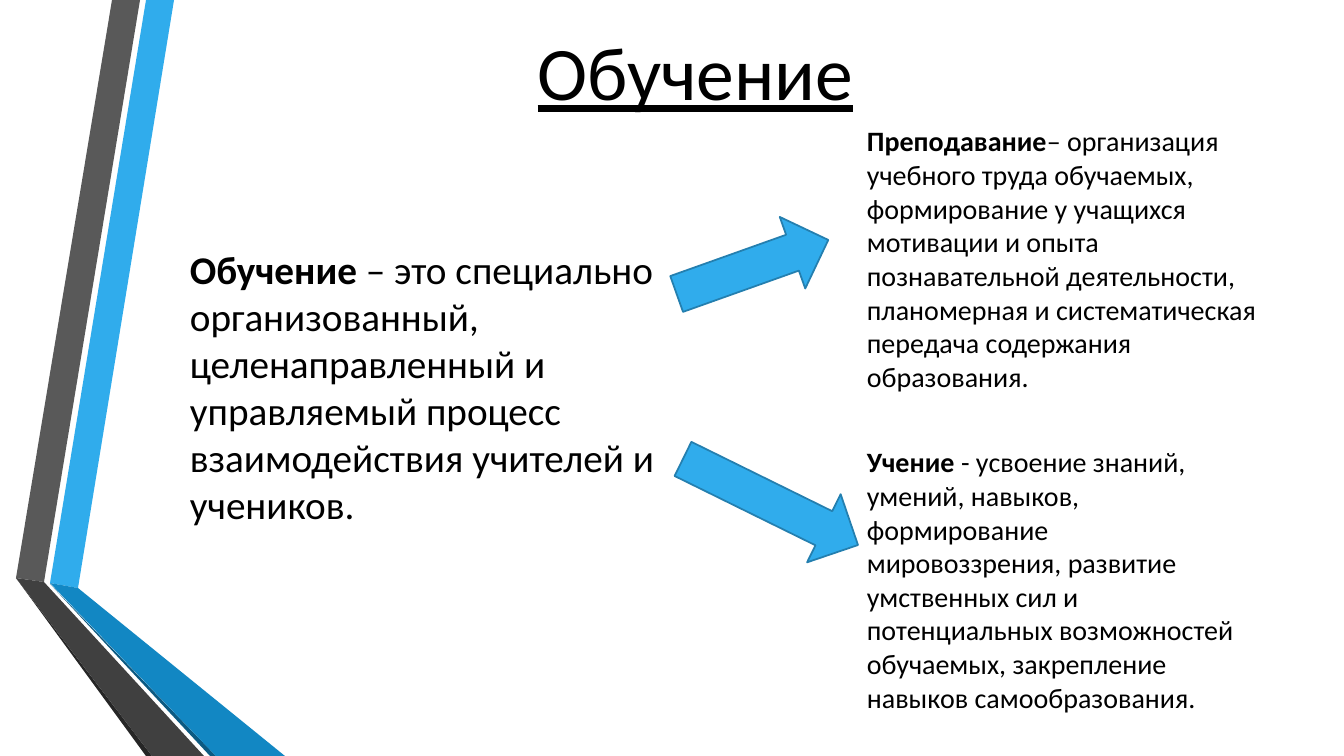
from pptx import Presentation
from pptx import util as u
from pptx.dml.color import RGBColor
from pptx.enum import shapes, text

PX = 914400 / 100.8
FONT = "Calibri"
BLACK = RGBColor(0x00, 0x00, 0x00)
BLUE = RGBColor(0x30, 0xAC, 0xEC)
BLUE_OUTLINE = RGBColor(0x24, 0x7F, 0xAF)
BLUE_FOLD = RGBColor(0x12, 0x87, 0xC3)
BLUE_EDGE = RGBColor(0x0C, 0x5A, 0x82)
GREY = RGBColor(0x59, 0x59, 0x59)
GREY_FOLD = RGBColor(0x40, 0x40, 0x40)
GREY_EDGE = RGBColor(0x26, 0x26, 0x26)

SLIDE_SIZE = (1344, 756)
TITLE = "Обучение"
TITLE_BOX = (139, -4, 1113, 149)

# Ribbon pieces from back to front: colour, corner points
RIBBONS = [
    (BLUE, [(50, 583), (78, 588), (174, 0), (146, 0)]),
    (GREY, [(140, 0), (112, 0), (16, 578), (44, 582)]),
    (GREY_EDGE, [(16, 578), (146, 756), (152, 756)]),
    (BLUE_EDGE, [(50, 584), (210, 756), (216, 756)]),
    (BLUE_FOLD, [(50, 583), (216, 756), (285, 756), (78, 588)]),
    (GREY_FOLD, [(16, 578), (152, 756), (204, 756), (44, 582)]),
]

# Box, size in points, term, explanation
DEFINITIONS = [
    ((180, 240, 560, 295), 28, "Обучение ",
     "– это специально организованный, целенаправленный и управляемый "
     "процесс взаимодействия учителей и учеников."),
    ((857, 119, 426, 315), 20, "Преподавание",
     "– организация учебного труда обучаемых, формирование у учащихся "
     "мотивации и опыта познавательной деятельности, планомерная и "
     "систематическая передача содержания образования."),
    ((857, 440, 398, 315), 20, "Учение ",
     "- усвоение знаний, умений, навыков, формирование мировоззрения, "
     "развитие умственных сил и потенциальных возможностей обучаемых, "
     "закрепление навыков самообразования."),
]

# Box, rotation in degrees
ARROWS = [
    ((672, 229, 161, 76), 340.4),
    ((673, 464, 195, 76), 26.2),
]


def emu(lengths):
    return [u.Emu(round(length * PX)) for length in lengths]


def format_run(run, size, bold=False):
    run.font.name = FONT
    run.font.size = u.Pt(size)
    run.font.bold = bold
    run.font.color.rgb = BLACK


def add_title(slide):
    title = slide.shapes.title
    title.left, title.top, title.width, title.height = emu(TITLE_BOX)
    title.text_frame.text = TITLE
    title.text_frame.vertical_anchor = text.MSO_ANCHOR.MIDDLE
    paragraph = title.text_frame.paragraphs[0]
    paragraph.alignment = text.PP_ALIGN.CENTER
    format_run(paragraph.runs[0], 54)
    paragraph.runs[0].font.underline = True


def add_ribbon(slide, color, points):
    builder = slide.shapes.build_freeform(*points[0], scale=PX)
    builder.add_line_segments(points[1:], close=True)
    ribbon = builder.convert_to_shape()
    ribbon.shadow.inherit = False
    ribbon.fill.solid()
    ribbon.fill.fore_color.rgb = color
    ribbon.line.fill.background()


def add_definition(slide, box, size, term, explanation):
    frame = slide.shapes.add_textbox(*emu(box)).text_frame
    frame.word_wrap = True
    paragraph = frame.paragraphs[0]
    for words, bold in ((term, True), (explanation, False)):
        run = paragraph.add_run()
        run.text = words
        format_run(run, size, bold)


def add_arrow(slide, box, rotation):
    arrow = slide.shapes.add_shape(shapes.MSO_SHAPE.RIGHT_ARROW, *emu(box))
    arrow.rotation = rotation
    arrow.shadow.inherit = False
    arrow.fill.solid()
    arrow.fill.fore_color.rgb = BLUE
    arrow.line.color.rgb = BLUE_OUTLINE
    arrow.line.width = u.Pt(1.25)


def main():
    presentation = Presentation()
    presentation.slide_width, presentation.slide_height = emu(SLIDE_SIZE)
    slide = presentation.slides.add_slide(presentation.slide_layouts[5])
    add_title(slide)
    for ribbon in RIBBONS:
        add_ribbon(slide, *ribbon)
    for definition in DEFINITIONS:
        add_definition(slide, *definition)
    for arrow in ARROWS:
        add_arrow(slide, *arrow)
    presentation.save("out.pptx")


if __name__ == "__main__":
    main()
